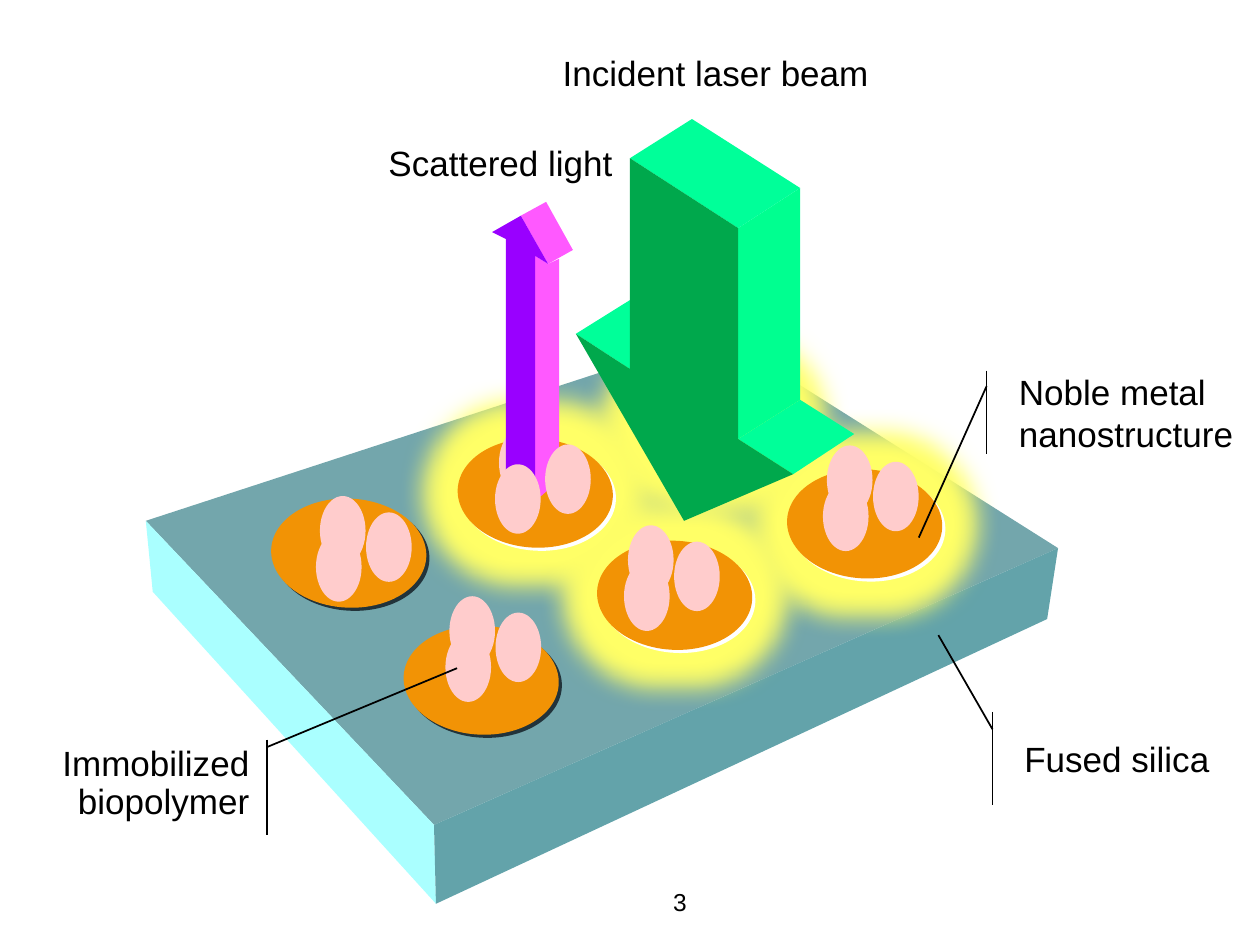
from lxml import etree
from pptx import Presentation
from pptx.dml.color import RGBColor
from pptx.enum import shapes, text
from pptx.oxml import ns
from pptx.util import Cm, Pt

KIND = shapes.MSO_SHAPE
ALIGN = text.PP_ALIGN
ANCHOR = text.MSO_ANCHOR

# All lengths are in cm.
SILICA_FACES = [
    ("73A6AC", [(2.94, 10.5), (14.49, 6.73), (21.33, 11.05), (8.75, 16.63)]),
    ("AAFFFF", [(2.94, 10.5), (8.75, 16.63), (8.79, 18.22), (3.08, 11.93)]),
    ("63A3AA", [(8.75, 16.63), (21.33, 11.05), (21.11, 12.48), (8.79, 18.22)]),
]
LASER_FACES = [
    ("00FF99", [(11.61, 6.73), (12.7, 6.05), (12.7, 7.44)]),
    ("00FF99", [(14.88, 8.85), (16.13, 8.06), (17.22, 8.75), (15.99, 9.56)]),
    ("00FF90", [(14.88, 4.6), (16.13, 3.79), (16.13, 8.06), (14.88, 8.85)]),
    ("00FF99", [(12.7, 3.19), (13.95, 2.4), (16.13, 3.79), (14.88, 4.6)]),
    ("00A84C", [(12.7, 3.19), (14.88, 4.6), (14.88, 8.85), (15.99, 9.56),
                (13.79, 10.5), (11.61, 6.73), (12.7, 7.44)]),
]
SCATTER_FACES = [
    ("FF59FF", [(10.79, 5.16), (11.05, 5.32), (11.27, 5.22), (11.27, 9.68),
                (10.91, 10), (10.79, 10)]),
    ("FF59FF", [(10.5, 4.35), (11.01, 4.07), (11.55, 5.04), (11.05, 5.32)]),
    ("9900FF", [(10.2, 4.82), (9.92, 4.68), (10.5, 4.35), (11.05, 5.32),
                (10.79, 5.16), (10.79, 10.08), (10.2, 9.78)]),
]
# Disk centre, centre of its rear biopolymer, whether the laser lights it
DISKS = [
    ((10.79, 9.94), (10.52, 9.33), True),
    ((17.43, 10.56), (17.13, 9.68), True),
    ((13.6, 12), (13.12, 11.29), True),
    ((7.03, 11.15), (6.91, 10.7), False),
    ((9.7, 13.71), (9.52, 12.72), False),
]
BEAM_SPOT = (14.39, 8.51)
DISK_SIZE = (3.13, 2.2)
GLOW_SIZE = (5.5, 4.7)
POLYMER_SIZE = (0.92, 1.4)
POLYMER_STEPS = [(0, 0), (0.93, 0.33), (-0.08, 0.73)]

LABELS = [
    ("Incident laser beam", (11, 0.91, 7.11, 1.12),
     dict(align=ALIGN.CENTER, insets=(0, 0.25))),
    ("Scattered light", (7.49, 2.72, 5.11, 1.12), dict(align=ALIGN.RIGHT)),
    ("3", (13.11, 17.75, 1.19, 0.79),
     dict(size=14, align=ALIGN.CENTER, insets=(0, 0))),
]
CALLOUTS = [
    ("Fused silica", (20.4, 14.35, 4.72, 1.88),
     (0.188, -0.083, -0.822, -0.314), dict(anchor=ANCHOR.MIDDLE)),
    ("Noble metal\nnanostructure", (20.29, 7.47, 4.83, 1.68),
     (0.188, -0.083, 2.005, -0.366),
     dict(anchor=ANCHOR.MIDDLE, insets=(0.25, 0))),
    ("Immobilized\nbiopolymer", (-0.1, 14.91, 5.23, 1.93),
     (0.079, 1.048, -0.746, 1.781),
     dict(align=ALIGN.RIGHT, insets=(0.1, 0.1), spacing=0.9)),
]


def rgb(code):
    return RGBColor.from_string(code)


def paint(shape, fill):
    """Give a plain fill with no outline and no inherited shadow."""
    shape.shadow.inherit = False
    shape.fill.solid()
    shape.fill.fore_color.rgb = rgb(fill)
    shape.line.fill.background()


def write(shape, words, size=20, align=ALIGN.LEFT, anchor=ANCHOR.TOP,
          insets=(0.25, 0.25), spacing=None):
    frame = shape.text_frame
    frame.word_wrap = True
    frame.vertical_anchor = anchor
    frame.margin_left, frame.margin_right = map(Cm, insets)
    frame.margin_top = frame.margin_bottom = Cm(0.13)
    frame.text = words
    for line in frame.paragraphs:
        line.alignment = align
        line.line_spacing = spacing
        for run in line.runs:
            run.font.size = Pt(size)
            run.font.name = "Arial"
            run.font.color.rgb = rgb("000000")


def add_faces(slide, faces):
    for fill, points in faces:
        corners = [(Cm(x), Cm(y)) for x, y in points]
        outline = slide.shapes.build_freeform(*corners[0])
        outline.add_line_segments(corners[1:], close=True)
        paint(outline.convert_to_shape(), fill)


def add_centred(slide, kind, centre, size, fill):
    (x, y), (width, height) = centre, size
    shape = slide.shapes.add_shape(kind, Cm(x - width / 2), Cm(y - height / 2),
                                   Cm(width), Cm(height))
    paint(shape, fill)
    return shape


def add_effect(shape, tag, **attributes):
    effects = shape._element.spPr.find(ns.qn("a:effectLst"))
    return etree.SubElement(effects, ns.qn(tag),
                            {key: str(value) for key, value in attributes.items()})


def add_glow(slide, centre):
    glow = add_centred(slide, KIND.ROUNDED_RECTANGLE, centre, GLOW_SIZE, "FFFF66")
    glow.adjustments[0] = 0.4
    add_effect(glow, "a:softEdge", rad=Cm(0.5))


def add_disk(slide, centre, lit):
    disk = add_centred(slide, KIND.OVAL, centre, DISK_SIZE, "F29305")
    disk.rotation = 3
    shadow = add_effect(disk, "a:outerShdw", dist=Cm(0.09), dir=45 * 60000,
                        algn="ctr", rotWithShape=0)
    etree.SubElement(shadow, ns.qn("a:srgbClr"), val="FFFFFF" if lit else "22333A")


def add_polymers(slide, rear, steps):
    for dx, dy in steps:
        add_centred(slide, KIND.OVAL, (rear[0] + dx, rear[1] + dy),
                    POLYMER_SIZE, "FFCCCC")


def add_callout(slide, words, box, pointer, style):
    callout = slide.shapes.add_shape(KIND.LINE_CALLOUT_1_ACCENT_BAR, *map(Cm, box))
    callout.shadow.inherit = False
    callout.fill.background()
    callout.line.color.rgb = rgb("000000")
    callout.line.width = Pt(1)
    for index, value in enumerate(pointer):
        callout.adjustments[index] = value
    write(callout, words, **style)


def main():
    deck = Presentation()
    deck.slide_width, deck.slide_height = Cm(25.4), Cm(19.05)
    slide = deck.slides.add_slide(deck.slide_layouts[6])

    add_faces(slide, SILICA_FACES)
    for centre in [BEAM_SPOT] + [centre for centre, _, lit in DISKS if lit]:
        add_glow(slide, centre)
    for centre, _, lit in DISKS:
        add_disk(slide, centre, lit)
    add_faces(slide, LASER_FACES)

    # The scattered light rises between the rear and front polymers of one disk.
    _, source, _ = DISKS[0]
    add_polymers(slide, source, POLYMER_STEPS[:1])
    add_faces(slide, SCATTER_FACES)
    add_polymers(slide, source, POLYMER_STEPS[1:])
    for _, rear, _ in DISKS[1:]:
        add_polymers(slide, rear, POLYMER_STEPS)

    for words, box, style in LABELS:
        write(slide.shapes.add_textbox(*map(Cm, box)), words, **style)
    for callout in CALLOUTS:
        add_callout(slide, *callout)
    deck.save("out.pptx")


if __name__ == "__main__":
    main()
